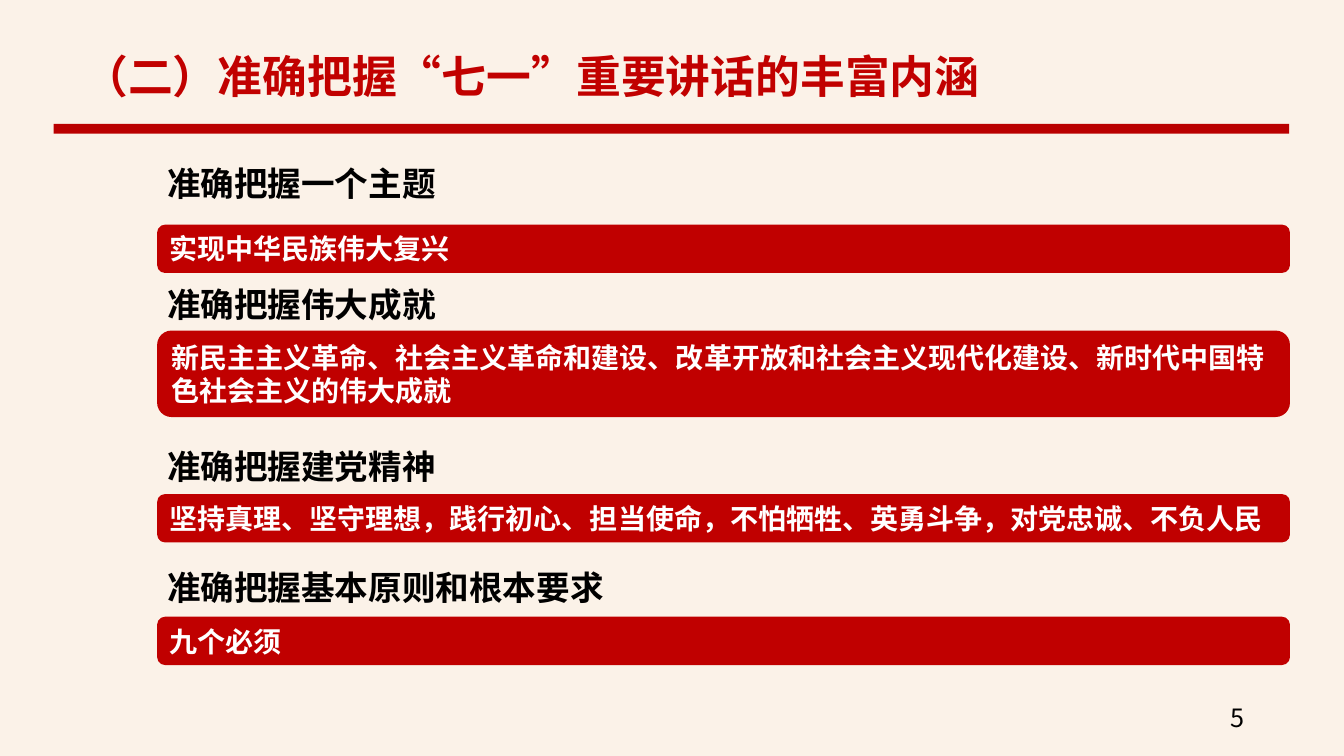
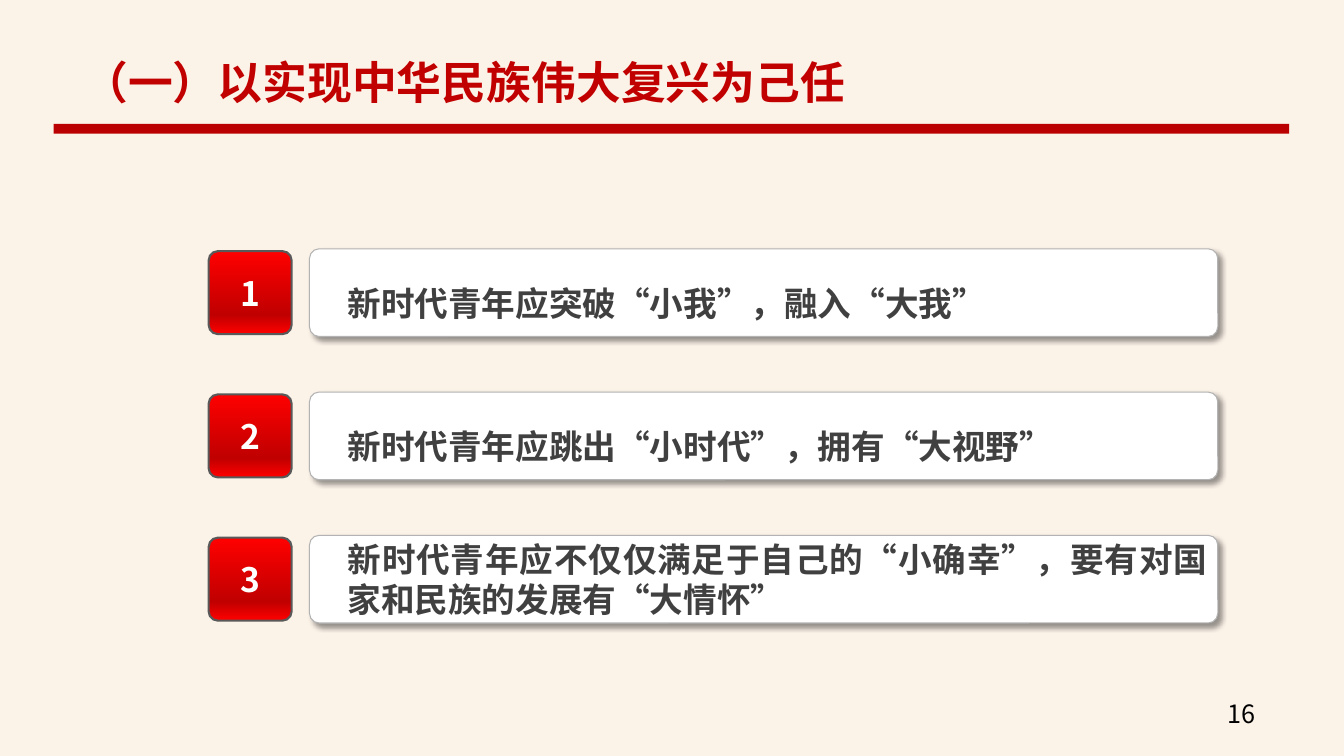
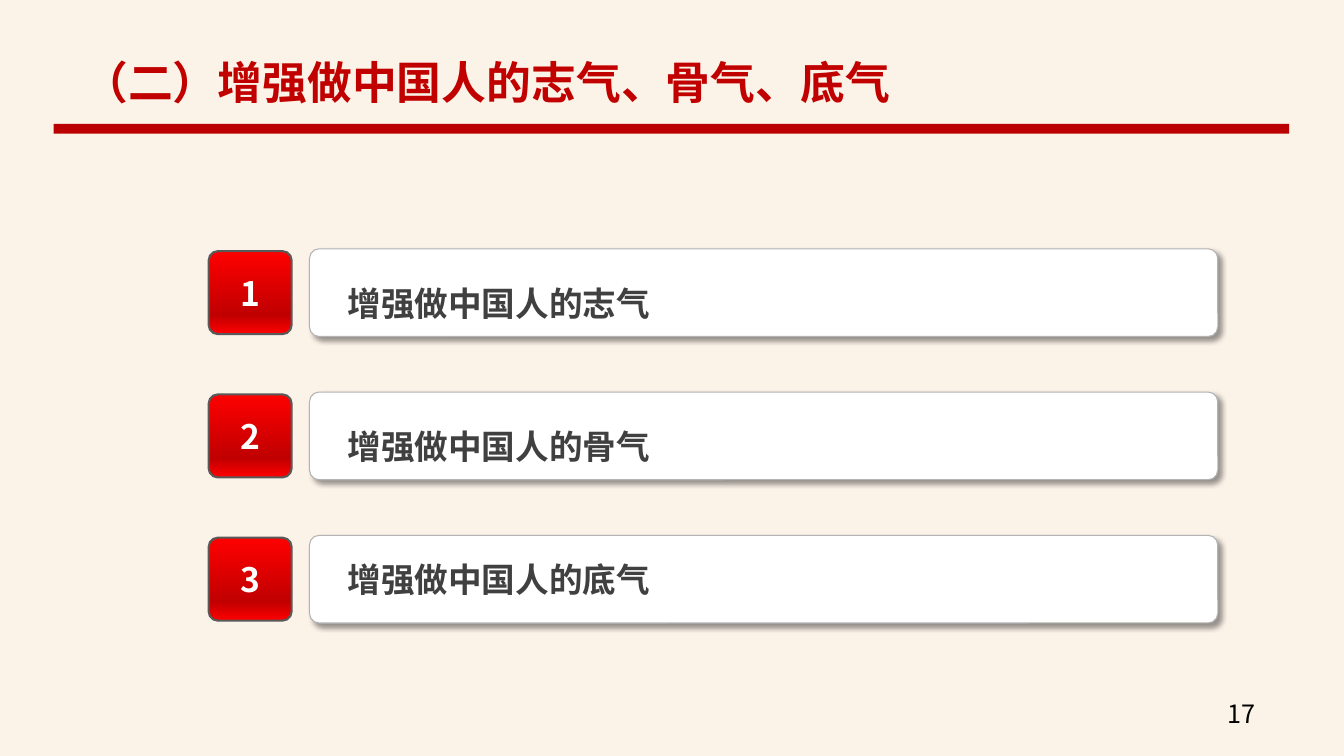
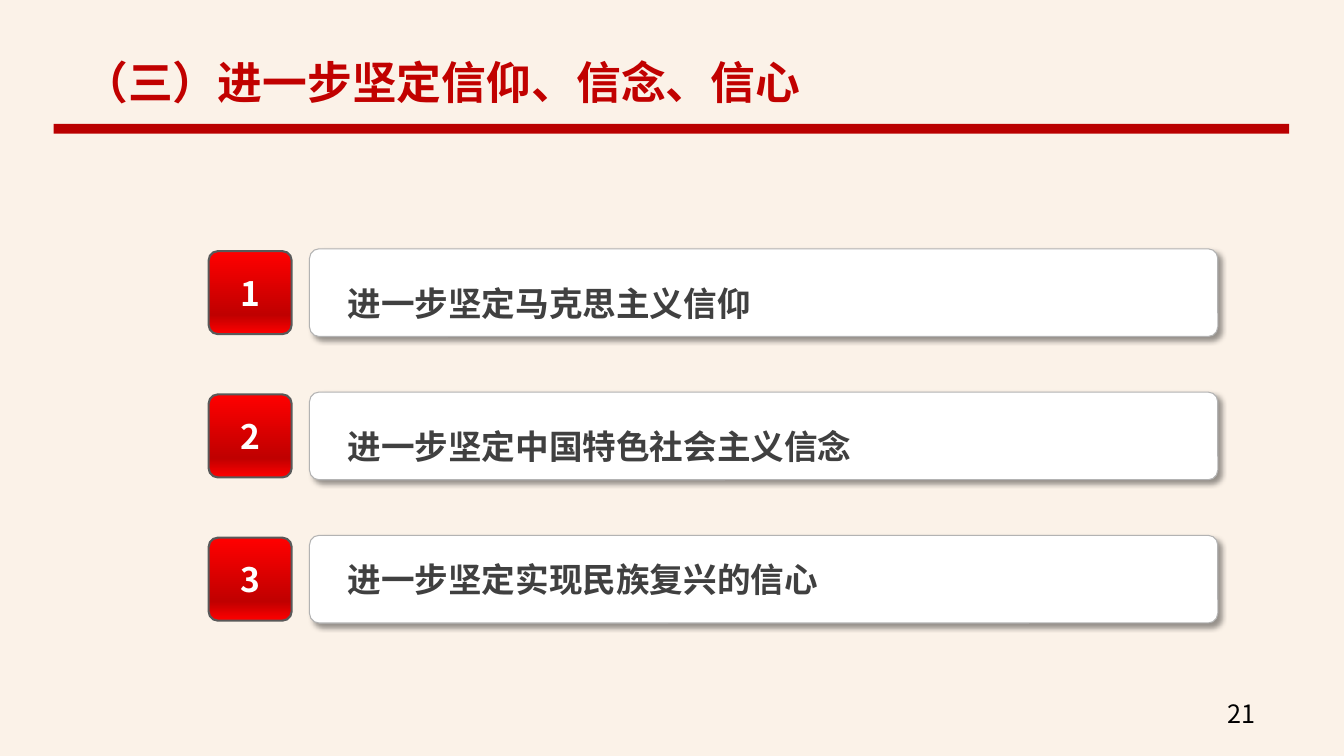
from copy import deepcopy
from dataclasses import dataclass

from lxml import etree
from pptx import Presentation
from pptx import util as u
from pptx.dml.color import RGBColor
from pptx.enum import lang, shapes, text
from pptx.oxml.ns import qn


@dataclass(frozen=True)
class Theme:
    font: str = "Noto Sans CJK SC"
    paper: str = "FBF2E8"
    rule: str = "BA0000"
    title: str = "C10100"
    bar: str = "C00000"
    white: str = "FFFFFF"
    black: str = "000000"
    body: str = "404040"
    panel_edge: str = "B3B3B3"
    tile_edge: str = "595959"
    tile_stops: tuple = ((0, "FF0000"), (0.77, "C00000"), (1, "FF0000"))
    title_size: int = 32
    heading_size: int = 24
    bar_size: int = 20
    number_size: int = 18


theme = Theme()


def write(box, lines, size, color, bold=True, align=text.PP_ALIGN.LEFT, anchor=text.MSO_ANCHOR.MIDDLE):
    frame = box.text_frame
    frame.word_wrap = True
    frame.vertical_anchor = anchor
    frame.text = "\n".join(lines)
    for para in frame.paragraphs:
        para.alignment = align
        for span in para.runs:
            span.font.size = u.Pt(size)
            span.font.bold = bold
            span.font.color.rgb = RGBColor.from_string(color)
            span.font.language_id = lang.MSO_LANGUAGE_ID.SIMPLIFIED_CHINESE
            span.font.name = theme.font
            latin = span.font._element.find(qn("a:latin"))
            east_asian = etree.Element(qn("a:ea"), typeface=theme.font)
            latin.addnext(east_asian)
    return frame.paragraphs


def add_block(parent, kind, left, top, width, height, color, edge=None, edge_width=0):
    block = parent.shapes.add_shape(kind, u.Cm(left), u.Cm(top), u.Cm(width), u.Cm(height))
    block.shadow.inherit = False
    block.fill.solid()
    block.fill.fore_color.rgb = RGBColor.from_string(color)
    if edge:
        block.line.color.rgb = RGBColor.from_string(edge)
        block.line.width = u.Pt(edge_width)
    else:
        block.line.fill.background()
    return block


RECT = shapes.MSO_SHAPE.RECTANGLE
ROUNDED = shapes.MSO_SHAPE.ROUNDED_RECTANGLE

deck = Presentation()
deck.slide_width, deck.slide_height = u.Cm(33.87), u.Cm(19.05)
backdrop = deck.slide_master.background.fill
backdrop.solid()
backdrop.fore_color.rgb = RGBColor.from_string(theme.paper)

headings = [
    ("准确把握一个主题", 0),
    ("准确把握伟大成就", 57.6),
    ("准确把握建党精神", 86.4),
    ("准确把握基本原则和根本要求", 57.6),
]
bars = [
    ("实现中华民族伟大复兴", 5.66, 1.22),
    ("新民主主义革命、社会主义革命和建设、改革开放和社会主义现代化建设、新时代中国特色社会主义的伟大成就", 8.33, 2.18),
    ("坚持真理、坚守理想，践行初心、担当使命，不怕牺牲、英勇斗争，对党忠诚、不负人民", 12.45, 1.22),
    ("九个必须", 15.54, 1.22),
]
overview = ("（二）准确把握“七一”重要讲话的丰富内涵", 1.07, "5", 30.76, 17.58, [])
numbered = [
    ("（一）以实现中华民族伟大复兴为己任", "16", [
        "新时代青年应突破“小我”，融入“大我”",
        "新时代青年应跳出“小时代”，拥有“大视野”",
        "新时代青年应不仅仅满足于自己的“小确幸”，要有对国家和民族的发展有“大情怀”",
    ]),
    ("（二）增强做中国人的志气、骨气、底气", "17", [
        "增强做中国人的志气",
        "增强做中国人的骨气",
        "增强做中国人的底气",
    ]),
    ("（三）进一步坚定信仰、信念、信心", "21", [
        "进一步坚定马克思主义信仰",
        "进一步坚定中国特色社会主义信念",
        "进一步坚定实现民族复兴的信心",
    ]),
]
contents = [overview] + [(title, 1.24, number, 30.68, 17.48, points) for title, number, points in numbered]

for title, title_top, number, number_left, number_top, points in contents:
    page = deck.slides.add_slide(deck.slide_layouts[6])
    add_block(page, RECT, 1.35, 3.12, 31.14, 0.25, theme.rule)
    title_box = page.shapes.add_textbox(u.Cm(1.85), u.Cm(title_top), u.Cm(31), u.Cm(1.63))
    write(title_box, [title], theme.title_size, theme.title, anchor=text.MSO_ANCHOR.BOTTOM)
    number_box = page.shapes.add_textbox(u.Cm(number_left), u.Cm(number_top), u.Cm(2.8), u.Cm(1.02))
    write(number_box, [number], theme.number_size, theme.black, bold=False, anchor=text.MSO_ANCHOR.TOP)

    for row, point in enumerate(points):
        offset = row * 3.61
        pair = page.shapes.add_group_shape()

        tile = add_block(pair, ROUNDED, 5.26, 6.33 + offset, 2.09, 2.09, theme.bar, theme.tile_edge, 1.5)
        tile.adjustments[0] = 0.11
        tile.fill.gradient()
        tile.fill.gradient_angle = 270
        stop_list = tile._element.spPr.find(".//" + qn("a:gsLst"))
        stop_list.append(deepcopy(stop_list[0]))
        for stop, (position, color) in zip(tile.fill.gradient_stops, theme.tile_stops):
            stop.position = position
            stop.color.rgb = RGBColor.from_string(color)
        write(tile, [str(row + 1)], theme.heading_size, theme.white, align=text.PP_ALIGN.CENTER)

        panel = add_block(pair, ROUNDED, 7.8, 6.27 + offset, 22.89, 2.21, theme.white, theme.panel_edge, 0.75)
        panel.adjustments[0] = 0.11
        effects = panel._element.spPr.find(qn("a:effectLst"))
        shadow = etree.SubElement(effects, qn("a:outerShdw"), blurRad=str(u.Pt(4)), dist=str(u.Pt(3)),
                                  dir="2700000", algn="tl", rotWithShape="0")
        shade = etree.SubElement(shadow, qn("a:srgbClr"), val=theme.black)
        etree.SubElement(shade, qn("a:alpha"), val="40000")
        panel.text_frame.margin_left = panel.text_frame.margin_right = u.Cm(0.18)
        para = write(panel, [point], theme.heading_size, theme.body, align=text.PP_ALIGN.JUSTIFY)[0]
        para._p.get_or_add_pPr().set("marL", str(u.Cm(0.71)))
        if row < len(points) - 1:
            para.line_spacing = 1.5

page = deck.slides[0]
heading_box = page.shapes.add_textbox(u.Cm(3.96), u.Cm(3.99), u.Cm(12.32), u.Cm(11.53))
paras = write(heading_box, [heading for heading, gap in headings], theme.heading_size, theme.black,
              anchor=text.MSO_ANCHOR.TOP)
for para, (heading, gap) in zip(paras, headings):
    para.space_before = u.Pt(gap)
for statement, top, height in bars:
    bar = add_block(page, ROUNDED, 3.96, top, 28.55, height, theme.bar)
    write(bar, [statement], theme.bar_size, theme.white)

deck.save("out.pptx")
